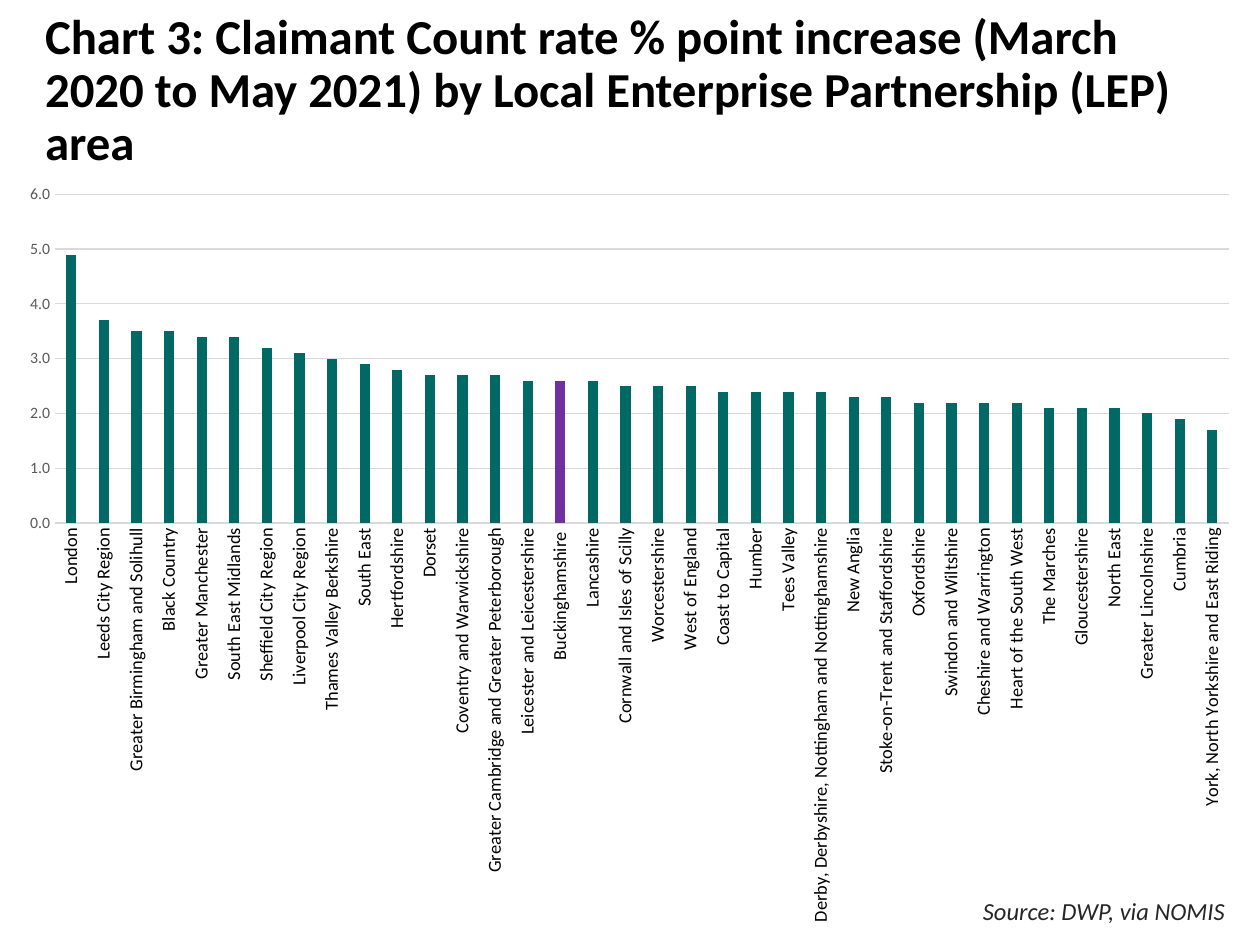
import pptx
import pptx.chart.data
import pptx.dml.color
import pptx.enum.chart
import pptx.enum.text
import pptx.oxml
import pptx.oxml.ns
import pptx.util
from pptx.util import Inches

FONT = "Calibri"
COLOURS = {
    "black": "000000",
    "source": "262626",
    "scale": "595959",
    "grid": "D9D9D9",
    "bar": "006965",
    "highlight": "7030A0",
}
HIGHLIGHT = "Buckinghamshire "
INCREASES = [
    ("London", 4.9),
    ("Leeds City Region", 3.7),
    ("Greater Birmingham and Solihull", 3.5),
    ("Black Country", 3.5),
    ("Greater Manchester", 3.4),
    ("South East Midlands", 3.4),
    ("Sheffield City Region", 3.2),
    ("Liverpool City Region", 3.1),
    ("Thames Valley Berkshire", 3.0),
    ("South East", 2.9),
    ("Hertfordshire", 2.8),
    ("Dorset", 2.7),
    ("Coventry and Warwickshire", 2.7),
    ("Greater Cambridge and Greater Peterborough", 2.7),
    ("Leicester and Leicestershire", 2.6),
    (HIGHLIGHT, 2.6),
    ("Lancashire", 2.6),
    ("Cornwall and Isles of Scilly", 2.5),
    ("Worcestershire", 2.5),
    ("West of England", 2.5),
    ("Coast to Capital", 2.4),
    ("Humber", 2.4),
    ("Tees Valley", 2.4),
    ("Derby, Derbyshire, Nottingham and Nottinghamshire", 2.4),
    ("New Anglia", 2.3),
    ("Stoke-on-Trent and Staffordshire", 2.3),
    ("Oxfordshire", 2.2),
    ("Swindon and Wiltshire", 2.2),
    ("Cheshire and Warrington", 2.2),
    ("Heart of the South West", 2.2),
    ("The Marches", 2.1),
    ("Gloucestershire", 2.1),
    ("North East", 2.1),
    ("Greater Lincolnshire", 2.0),
    ("Cumbria", 1.9),
    ("York, North Yorkshire and East Riding", 1.7),
]


def rgb(name):
    return pptx.dml.color.RGBColor.from_string(COLOURS[name])


def style_font(font, size, colour):
    font.name = FONT
    font.size = pptx.util.Pt(size)
    font.color.rgb = rgb(colour)


deck = pptx.Presentation()
deck.slide_width, deck.slide_height = Inches(10), Inches(7.5)
page = deck.slides.add_slide(deck.slide_layouts[6])

# Title, ending in a line break
title = page.shapes.add_textbox(Inches(0.26), Inches(0.45), Inches(9.48), Inches(1.02))
title.text_frame.word_wrap = True
title.text_frame.vertical_anchor = pptx.enum.text.MSO_ANCHOR.MIDDLE
title.text_frame.text = (
    "Chart 3: Claimant Count rate % point increase (March 2020 to May 2021) "
    "by Local Enterprise Partnership (LEP) area\v"
)
heading = title.text_frame.paragraphs[0]
heading.line_spacing = 0.9
style_font(heading.font, 27.9, "black")
for span in heading.runs:
    style_font(span.font, 27.9, "black")
    span.font.bold = True
for line_break in heading._p.findall(pptx.oxml.ns.qn("a:br")):
    line_break.append(pptx.oxml.parse_xml(
        f'<a:rPr {pptx.oxml.ns.nsdecls("a")} sz="2790" b="1"/>'))

# Chart of increases by area
data = pptx.chart.data.CategoryChartData(number_format="0.0")
data.categories = [area for area, increase in INCREASES]
data.add_series("Series 1", [increase for area, increase in INCREASES])
chart = page.shapes.add_chart(
    pptx.enum.chart.XL_CHART_TYPE.COLUMN_CLUSTERED,
    Inches(0.04), Inches(1.36), Inches(9.91), Inches(6.07), data,
).chart
chart.has_title = False
chart.has_legend = False
style_font(chart.font, 10, "black")

# Columns
plot = chart.plots[0]
plot.gap_width = 219
plot.overlap = -27
plot.vary_by_categories = False
bars = plot.series[0]
bars.format.fill.solid()
bars.format.fill.fore_color.rgb = rgb("bar")
highlight = [area for area, increase in INCREASES].index(HIGHLIGHT)
highlight_fill = bars.points[highlight].format.fill
highlight_fill.solid()
highlight_fill.fore_color.rgb = rgb("highlight")

# Axes
areas, scale = chart.category_axis, chart.value_axis
for axis, size, colour in ((areas, 10.5, "black"), (scale, 9, "scale")):
    axis.major_tick_mark = pptx.enum.chart.XL_TICK_MARK.NONE
    axis.minor_tick_mark = pptx.enum.chart.XL_TICK_MARK.NONE
    style_font(axis.tick_labels.font, size, colour)
label_body = areas._element.find(
    f'{pptx.oxml.ns.qn("c:txPr")}/{pptx.oxml.ns.qn("a:bodyPr")}')
label_body.set("rot", "-5400000")
label_body.set("vert", "horz")
scale.minimum_scale, scale.maximum_scale, scale.major_unit = 0, 6, 1
scale.tick_labels.number_format = "#,##0.0"
scale.tick_labels.number_format_is_linked = False
scale.format.line.fill.background()
for line in (areas.format.line, scale.major_gridlines.format.line):
    line.color.rgb = rgb("grid")
    line.width = pptx.util.Pt(0.75)

# Plot area as fractions of the chart
plot_area = chart._chartSpace.chart.plotArea
for old_layout in plot_area.findall(pptx.oxml.ns.qn("c:layout")):
    plot_area.remove(old_layout)
plot_area.insert(0, pptx.oxml.parse_xml(
    f'<c:layout {pptx.oxml.ns.nsdecls("c")}><c:manualLayout>'
    '<c:layoutTarget val="inner"/><c:xMode val="edge"/><c:yMode val="edge"/>'
    '<c:x val="0.04"/><c:y val="0.03"/><c:w val="0.94"/><c:h val="0.43"/>'
    '</c:manualLayout></c:layout>'))

# Source
source = page.shapes.add_textbox(Inches(7.44), Inches(7.06), Inches(2.38), Inches(0.34))
source.text_frame.word_wrap = True
source.text_frame.text = "Source: DWP, via NOMIS"
credit = source.text_frame.paragraphs[0]
credit.alignment = pptx.enum.text.PP_ALIGN.RIGHT
style_font(credit.runs[0].font, 14, "source")
credit.runs[0].font.italic = True

deck.save("out.pptx")
